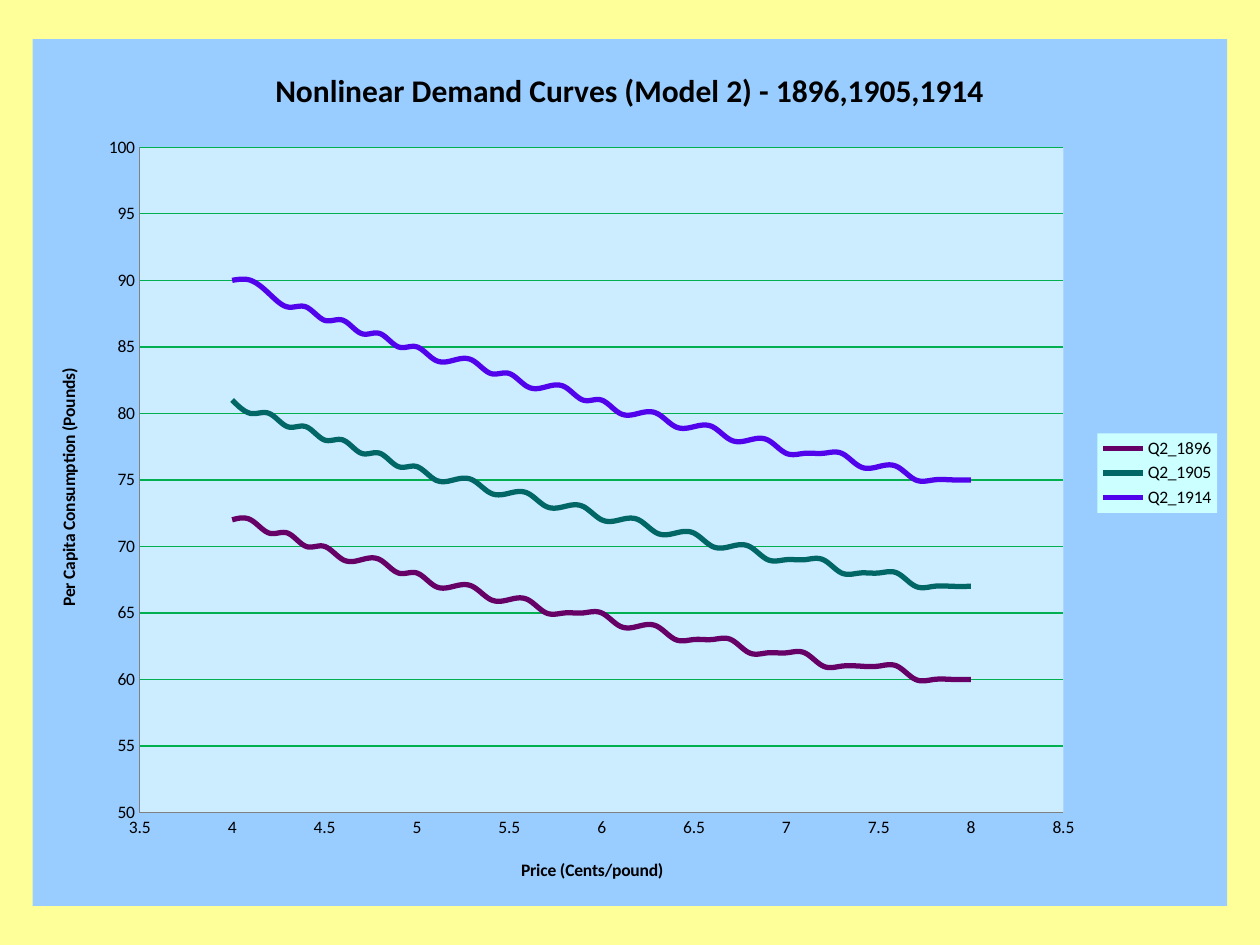
import dataclasses
import pptx
import pptx.chart.data
import pptx.dml.color
import pptx.enum.chart
import pptx.oxml
import pptx.oxml.ns
import pptx.util

Inches = pptx.util.Inches
Pt = pptx.util.Pt
NS = pptx.oxml.ns.nsdecls("c", "a")


@dataclasses.dataclass(frozen=True)
class Theme:
    """Colours, font and type sizes of the slide."""
    font: str = "Calibri"
    page: str = "FFFF99"
    panel: str = "99CCFF"
    plot: str = "CCECFF"
    key: str = "CCFFFF"
    grid: str = "00B050"
    axis: str = "808080"
    ink: str = "000000"
    head: int = 18
    body: int = 10


THEME = Theme()
POWER = -0.272
CURVES = [
    ("Q2_1896", 72.1, "660066"),
    ("Q2_1905", 80.6, "006666"),
    ("Q2_1914", 90.2, "5104EC"),
]


def rgb(code):
    """Return the colour for a hex code."""
    return pptx.dml.color.RGBColor.from_string(code)


def style(font, size, bold=False):
    """Apply the theme font at the given size."""
    font.name = THEME.font
    font.size = Pt(size)
    font.bold = bold
    font.color.rgb = rgb(THEME.ink)


def stroke(line, code, width):
    """Set the colour and width of a line."""
    line.color.rgb = rgb(code)
    line.width = Pt(width)


def shade(prior, code):
    """Add a plain fill with no outline after a chart node."""
    prior.addnext(pptx.oxml.parse_xml(
        f'<c:spPr {NS}><a:solidFill><a:srgbClr val="{code}"/></a:solidFill>'
        '<a:ln><a:noFill/></a:ln></c:spPr>'))


def place(node, index, frame, spot, inner=False):
    """Fix a chart part at a spot in inches within the chart frame."""
    for old in node.findall(pptx.oxml.ns.qn("c:layout")):
        node.remove(old)
    parts = ['<c:layoutTarget val="inner"/>'] if inner else []
    parts += ['<c:xMode val="edge"/>', '<c:yMode val="edge"/>']
    parts += [f'<c:{side} val="{Inches(num) / span}"/>'
              for side, num, span in zip("xywh", spot, frame * 2)]
    node.insert(index, pptx.oxml.parse_xml(
        f'<c:layout {NS}><c:manualLayout>{"".join(parts)}</c:manualLayout></c:layout>'))


def label(title, text, size, frame, spot):
    """Write a chart or axis title and place it."""
    run = title.text_frame.paragraphs[0].add_run()
    run.text = text
    style(run.font, size, True)
    place(title._element, 1, frame, spot)


def scale(axis, low, high, step):
    """Set the range and look of an axis."""
    axis.minimum_scale, axis.maximum_scale, axis.major_unit = low, high, step
    axis.major_tick_mark = axis.minor_tick_mark = pptx.enum.chart.XL_TICK_MARK.NONE
    axis.tick_labels.number_format = "General"
    axis.tick_labels.number_format_is_linked = False
    style(axis.tick_labels.font, THEME.body)
    stroke(axis.format.line, THEME.axis, 0.75)


def demand():
    """Return whole-pound points on each constant-elasticity curve."""
    data = pptx.chart.data.XyChartData(number_format="0")
    for name, base, _ in CURVES:
        series = data.add_series(name)
        for tenth in range(40, 81):
            price = tenth / 10
            series.add_data_point(price, round(base * (price / 4) ** POWER))
    return data


def legend(chart, frame):
    """Place the key at the right of the plot."""
    chart.has_legend = True
    key = chart.legend
    key.position = pptx.enum.chart.XL_LEGEND_POSITION.RIGHT
    key.include_in_layout = False
    place(key._element, 1, frame, (8.45, 3.13, 0.95, 0.63))
    shade(key._element[-1], THEME.key)
    style(key.font, THEME.body)


def graph(slide, left, top, wide, high):
    """Draw the demand chart in the given box."""
    kind = pptx.enum.chart.XL_CHART_TYPE.XY_SCATTER_SMOOTH_NO_MARKERS
    chart = slide.shapes.add_chart(kind, left, top, wide, high, demand()).chart
    frame = (wide, high)
    style(chart.font, THEME.body)
    root = chart._chartSpace.chart
    area = root.plotArea
    shade(root, THEME.panel)
    shade(area[-1], THEME.plot)
    place(area, 0, frame, (0.85, 0.86, 7.33, 5.28), True)
    chart.has_title = True
    label(chart.chart_title, "Nonlinear Demand Curves (Model 2) - 1896,1905,1914",
          THEME.head, frame, (1.88, 0.19))
    price, pounds = chart.category_axis, chart.value_axis
    scale(price, 3.5, 8.5, 0.5)
    scale(pounds, 50, 100, 5)
    label(price.axis_title, "Price (Cents/pound)", THEME.body, frame, (3.85, 6.48))
    label(pounds.axis_title, "Per Capita Consumption (Pounds)",
          THEME.body, frame, (0.17, 2.59))
    price.has_major_gridlines = False
    pounds.has_major_gridlines = True
    stroke(pounds.major_gridlines.format.line, THEME.grid, 0.75)
    chart.plots[0].vary_by_categories = False
    for series, (_, _, code) in zip(chart.plots[0].series, CURVES):
        stroke(series.format.line, code, 3)
        series.marker.style = pptx.enum.chart.XL_MARKER_STYLE.NONE
        series._element.get_or_add_smooth().val = True
    legend(chart, frame)


def main():
    """Build and save the slide."""
    deck = pptx.Presentation()
    deck.slide_width, deck.slide_height = Inches(10), Inches(7.5)
    slide = deck.slides.add_slide(deck.slide_layouts[6])
    slide.background.fill.solid()
    slide.background.fill.fore_color.rgb = rgb(THEME.page)
    graph(slide, Inches(0.26), Inches(0.31), Inches(9.48), Inches(6.88))
    deck.save("out.pptx")


if __name__ == "__main__":
    main()
